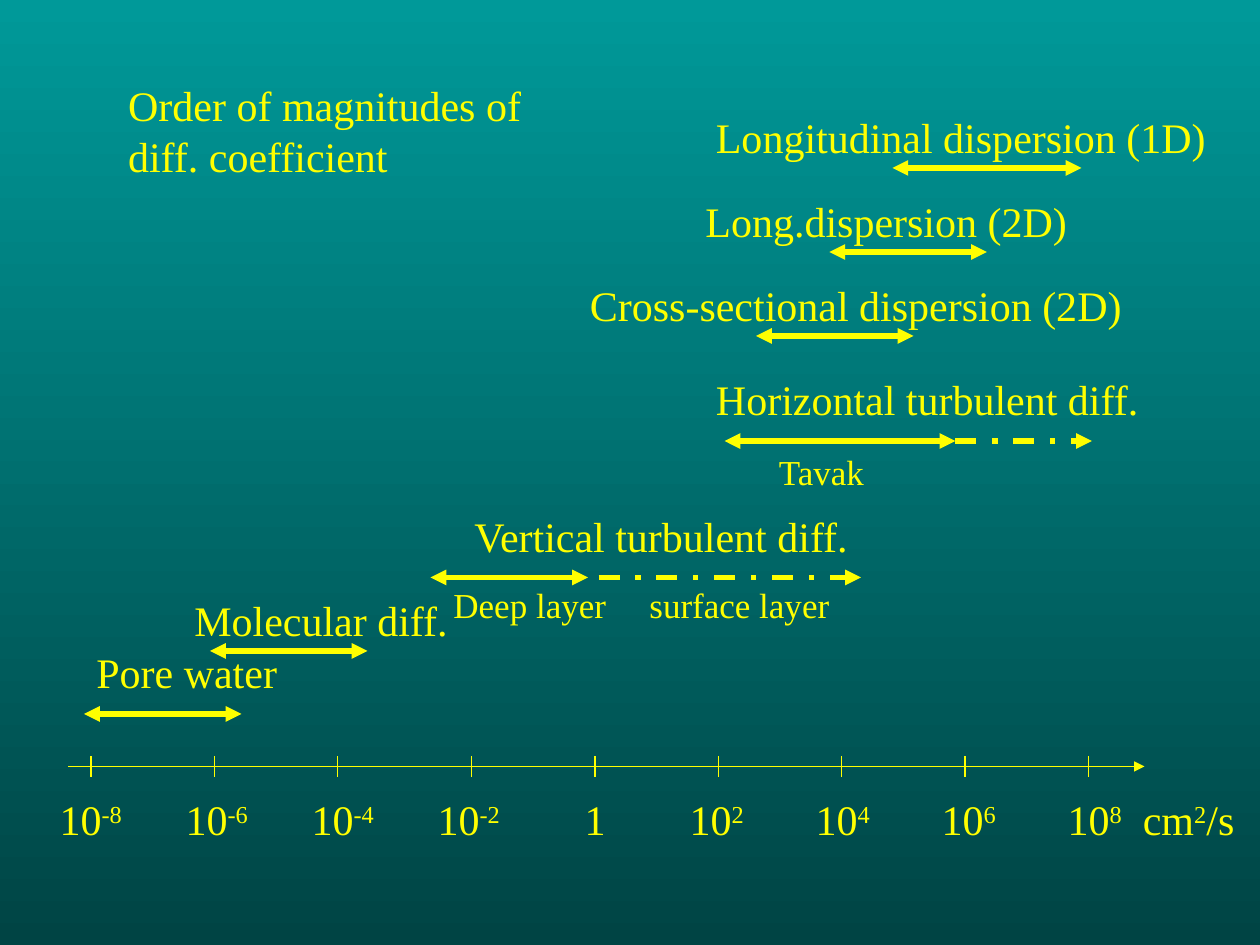
"""Build a slide comparing orders of magnitude of diffusion coefficients."""
from lxml.etree import SubElement
from pptx import Presentation
from pptx.dml.color import RGBColor
from pptx.enum.dml import MSO_LINE
from pptx.enum.shapes import MSO_CONNECTOR
from pptx.enum.text import MSO_ANCHOR, PP_ALIGN
from pptx.oxml.ns import qn
from pptx.util import Pt

YELLOW = RGBColor(0xFF, 0xFF, 0x00)
TEAL = RGBColor(0x00, 0x99, 0x99)
DARK_TEAL = RGBColor(0x00, 0x44, 0x44)


def add_line(x1, y1, x2, y2, width=0.75, ends=(), dash=None):
    line = slide.shapes.add_connector(
        MSO_CONNECTOR.STRAIGHT, Pt(x1), Pt(y1), Pt(x2), Pt(y2))
    line.line.color.rgb = YELLOW
    line.line.width = Pt(width)
    if dash:
        line.line.dash_style = dash
    outline = line.line._get_or_add_ln()
    for end in ends:
        SubElement(outline, qn(f"a:{end}"), type="triangle")
    SubElement(line._element.spPr, qn("a:effectLst"))


def write_text(shape, box, runs, size=24, tabs=()):
    shape.left, shape.top, shape.width, shape.height = map(Pt, box)
    frame = shape.text_frame
    frame.word_wrap = True
    frame.vertical_anchor = MSO_ANCHOR.TOP
    paragraph = frame.paragraphs[0]
    paragraph.alignment = PP_ALIGN.LEFT
    if tabs:
        stops = SubElement(paragraph._p.get_or_add_pPr(), qn("a:tabLst"))
        for stop in tabs:
            SubElement(stops, qn("a:tab"), pos=str(Pt(stop)), algn="l")
    paragraph.font.name = "Times New Roman"
    paragraph.font.size = Pt(size)
    paragraph.font.color.rgb = YELLOW
    for text, raised in runs:
        run = paragraph.add_run()
        run.text = text
        if raised:
            run._r.get_or_add_rPr().set("baseline", "30000")


presentation = Presentation()
presentation.slide_width, presentation.slide_height = Pt(720), Pt(540)
slide = presentation.slides.add_slide(presentation.slide_layouts[5])

background = slide.background.fill
background.gradient()
background.gradient_angle = 270
for stop, color, position in zip(background.gradient_stops, (TEAL, DARK_TEAL), (0, 1)):
    stop.color.rgb = color
    stop.position = position

write_text(slide.shapes.title, (66, 42, 258, 65),
           [("Order of magnitudes of diff. coefficient", False)])

add_line(39, 438, 654, 438, ends=["tailEnd"])
for index in range(9):
    tick_x = 52 + 70.5 * index + (6 if index > 2 else 0)
    add_line(tick_x, 432, tick_x, 444)

scale = []
for exponent in range(-8, 10, 2):
    lead = "\t" if scale else ""
    if exponent:
        scale += [(f"{lead}10", False), (str(exponent), True)]
    else:
        scale.append((f"{lead}1", False))
scale += [("\tcm", False), ("2", True), ("/s", False)]
write_text(slide.shapes.add_textbox(0, 0, 0, 0), (27, 450, 693, 36), scale,
           tabs=[72, 144, 216, 300, 360, 432, 504, 576, 619])

labels = [
    ("Pore water", 48, 366, 133, 24),
    ("Molecular diff.", 104, 336, 172, 24),
    ("Vertical turbulent diff.", 264, 288, 243, 24),
    ("Deep layer\tsurface layer", 252, 330, 270, 20),
    ("Cross-sectional dispersion (2D)", 330, 156, 330, 24),
    ("Long.dispersion (2D)", 396, 108, 276, 24),
    ("Longitudinal dispersion (1D)", 402, 60, 318, 24),
    ("Horizontal turbulent diff.", 402, 210, 276, 24),
    ("Tavak", 438, 254, 78, 20),
]
for text, left, top, width, size in labels:
    write_text(slide.shapes.add_textbox(0, 0, 0, 0), (left, top, width, size * 1.5),
               [(text, False)], size, tabs=[112] if "\t" in text else ())

ranges = [
    (48, 138, 408),
    (120, 210, 372),
    (246, 336, 330),
    (432, 522, 192),
    (474, 564, 144),
    (510, 618, 96),
    (414, 546, 252),
]
for start, end, y in ranges:
    add_line(start, y, end, y, 3, ["headEnd", "tailEnd"])

for start, end, y in [(342, 492, 330), (546, 624, 252)]:
    add_line(start, y, end, y, 3, ["tailEnd"], MSO_LINE.DASH_DOT)

presentation.save("out.pptx")
